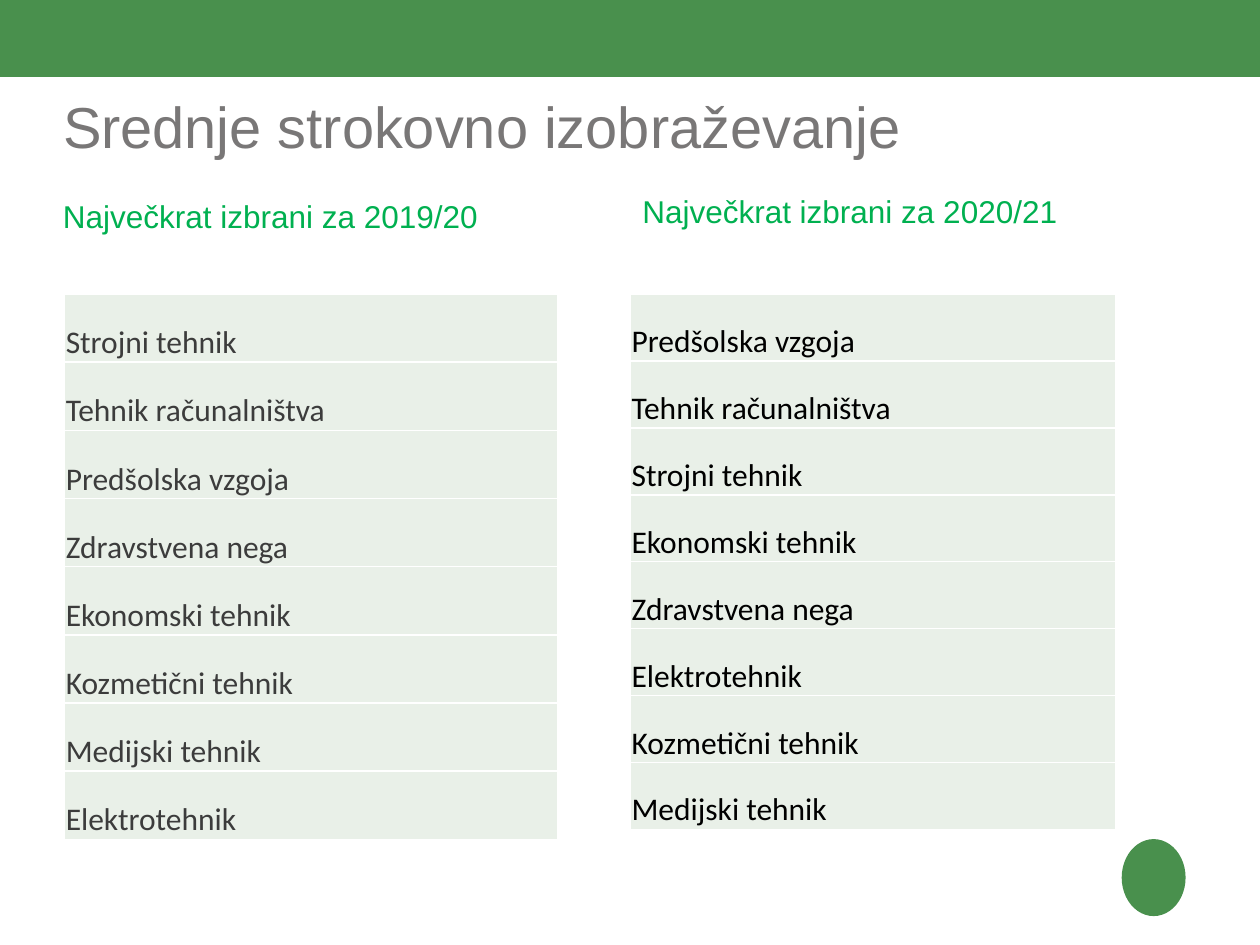
from lxml import etree
from pptx import Presentation
from pptx.dml.color import RGBColor
from pptx.enum.shapes import MSO_SHAPE
from pptx.enum.text import MSO_ANCHOR, PP_ALIGN
from pptx.oxml.ns import qn
from pptx.util import Pt

RECT, OVAL = MSO_SHAPE.RECTANGLE, MSO_SHAPE.OVAL
MIDDLE, BOTTOM, TOP = MSO_ANCHOR.MIDDLE, MSO_ANCHOR.BOTTOM, MSO_ANCHOR.TOP
LEFT = PP_ALIGN.LEFT

COLORS = {
    "green": "49904D",
    "head": "00B050",
    "title": "797777",
    "gray": "3C3C3C",
    "black": "000000",
    "cell": "E9F0E8",
    "white": "FFFFFF",
}

OLD = ["Strojni tehnik", "Tehnik računalništva", "Predšolska vzgoja",
       "Zdravstvena nega", "Ekonomski tehnik", "Kozmetični tehnik",
       "Medijski tehnik", "Elektrotehnik"]
NEW = ["Predšolska vzgoja", "Tehnik računalništva", "Strojni tehnik",
       "Ekonomski tehnik", "Zdravstvena nega", "Elektrotehnik",
       "Kozmetični tehnik", "Medijski tehnik"]


def rgb(name):
    return RGBColor.from_string(COLORS[name])


def place(shape, box):
    shape.left, shape.top, shape.width, shape.height = map(Pt, box)


def write(frame, text, size, color, font="Arial"):
    frame.text = text
    para = frame.paragraphs[0]
    para.alignment = LEFT
    para.font.name = font
    para.font.size = Pt(size)
    para.font.color.rgb = rgb(color)


def pad(frame, x, y):
    frame.margin_left = frame.margin_right = Pt(x)
    frame.margin_top = frame.margin_bottom = Pt(y)


def add_block(slide, kind, box):
    shape = slide.shapes.add_shape(kind, *map(Pt, box))
    shape.shadow.inherit = False
    shape.fill.solid()
    shape.fill.fore_color.rgb = rgb("green")
    shape.line.fill.background()


def add_title(slide, text, box):
    title = slide.shapes.title
    place(title, box)
    frame = title.text_frame
    pad(frame, 0, 0)
    frame.vertical_anchor = MIDDLE
    write(frame, text, 33, "title")


def add_head(slide, text, box, anchor, inset=(0, 0)):
    frame = slide.shapes.add_textbox(*map(Pt, box)).text_frame
    frame.word_wrap = True
    frame.vertical_anchor = anchor
    pad(frame, *inset)
    write(frame, text, 18, "head")


def add_edges(cell):
    props = cell._tc.get_or_add_tcPr()
    for side in ("a:lnL", "a:lnR", "a:lnT", "a:lnB"):
        line = etree.SubElement(props, qn(side), w=str(Pt(1)))
        fill = etree.SubElement(line, qn("a:solidFill"))
        etree.SubElement(fill, qn("a:srgbClr"), val=COLORS["white"])


def add_list(slide, names, box, color):
    table = slide.shapes.add_table(len(names), 1, *map(Pt, box)).table
    table.first_row = table.horz_banding = False
    for row, name in zip(table.rows, names):
        row.height = Pt(box[3] / len(names))
        cell = row.cells[0]
        add_edges(cell)
        cell.fill.solid()
        cell.fill.fore_color.rgb = rgb("cell")
        pad(cell, 0.6, 0.6)
        cell.margin_bottom = 0
        cell.vertical_anchor = BOTTOM
        write(cell.text_frame, name, 18, color, "Calibri")


def main():
    deck = Presentation()
    deck.slide_width, deck.slide_height = Pt(720), Pt(540)
    slide = deck.slides.add_slide(deck.slide_layouts[5])

    # Top band and corner mark
    add_block(slide, RECT, (0, -0.5, 720, 44.5))
    add_block(slide, OVAL, (641, 479.5, 36.5, 44))

    add_title(slide, "Srednje strokovno izobraževanje", (36, 49, 648, 45))

    # Left column: 2019/20
    add_head(slide, "Največkrat izbrani za 2019/20",
             (36, 100, 318, 34), BOTTOM)
    add_list(slide, OLD, (37, 168, 282, 311.6), "gray")

    # Right column: 2020/21
    add_head(slide, "Največkrat izbrani za 2020/21",
             (360, 106, 272, 29), TOP, (7.2, 3.6))
    add_list(slide, NEW, (360.3, 168, 277.5, 306), "black")

    deck.save("out.pptx")


if __name__ == "__main__":
    main()
